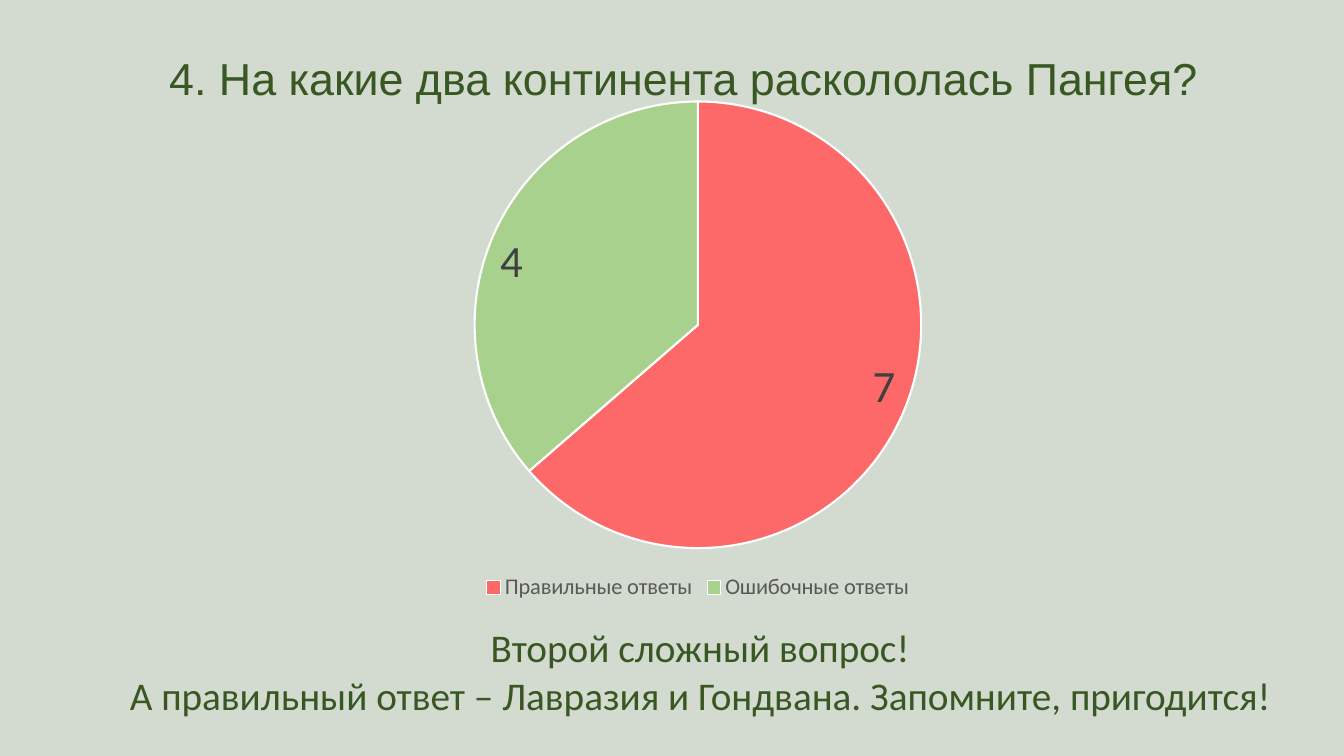
from pptx import Presentation
from pptx.chart.data import CategoryChartData
from pptx.dml.color import RGBColor
from pptx.enum.chart import XL_CHART_TYPE, XL_LABEL_POSITION, XL_LEGEND_POSITION
from pptx.enum.text import MSO_AUTO_SIZE, PP_ALIGN
from pptx.util import Pt

BACKGROUND = "D3DACF"
DARK_GREEN = "385723"
ANSWERS = [("Правильные ответы", 7, "FD6969"), ("Ошибочные ответы", 4, "A9D18E")]


def color(hex_string):
    return RGBColor.from_string(hex_string)


def set_font(font, name, size, hex_string):
    font.name = name
    font.size = Pt(size)
    font.color.rgb = color(hex_string)


def add_centered_text(page, box, lines, font_name, size, wrap=True):
    text_box = page.shapes.add_textbox(*map(Pt, box))
    frame = text_box.text_frame
    frame.word_wrap = wrap
    frame.auto_size = MSO_AUTO_SIZE.SHAPE_TO_FIT_TEXT
    for index, line in enumerate(lines):
        para = frame.add_paragraph() if index else frame.paragraphs[0]
        para.alignment = PP_ALIGN.CENTER
        span = para.add_run()
        span.text = line
        set_font(span.font, font_name, size, DARK_GREEN)


def add_answer_pie(page, box):
    """Pie of right and wrong answers with a legend below."""
    data = CategoryChartData()
    data.categories = [name for name, _, _ in ANSWERS]
    data.add_series("Ответы", [count for _, count, _ in ANSWERS])
    chart = page.shapes.add_chart(XL_CHART_TYPE.PIE, *map(Pt, box), data).chart
    chart.has_title = False
    set_font(chart.font, "Calibri", 10, "000000")

    chart.has_legend = True
    chart.legend.position = XL_LEGEND_POSITION.BOTTOM
    chart.legend.include_in_layout = False
    set_font(chart.legend.font, "Calibri", 16, "595959")

    plot = chart.plots[0]
    plot.vary_by_categories = True
    series = plot.series[0]
    for index, (_, _, fill) in enumerate(ANSWERS):
        slice_format = series.points[index].format
        slice_format.fill.solid()
        slice_format.fill.fore_color.rgb = color(fill)
        slice_format.line.color.rgb = color("FFFFFF")
        slice_format.line.width = Pt(1.5)

    labels = series.data_labels
    labels.show_value = True
    labels.show_percentage = False
    labels.position = XL_LABEL_POSITION.INSIDE_END
    set_font(labels.font, "Calibri", 32, "404040")


def build_question_slide(deck):
    page = deck.slides.add_slide(deck.slide_layouts[6])
    page.background.fill.solid()
    page.background.fill.fore_color.rgb = color(BACKGROUND)
    add_centered_text(page, (38.2, 32.4, 900.7, 46),
                      ["4. На какие два континента раскололась Пангея?"], "Arial", 32)
    add_answer_pie(page, (246.2, 62.6, 504.7, 370))
    add_centered_text(page, (80.6, 442, 838.8, 75),
                      ["Второй сложный вопрос!",
                       "А правильный ответ – Лавразия и Гондвана. Запомните, пригодится!"],
                      "Calibri", 28, wrap=False)


def main():
    deck = Presentation()
    deck.slide_width, deck.slide_height = Pt(960), Pt(540)
    build_question_slide(deck)
    deck.save("out.pptx")


if __name__ == "__main__":
    main()
